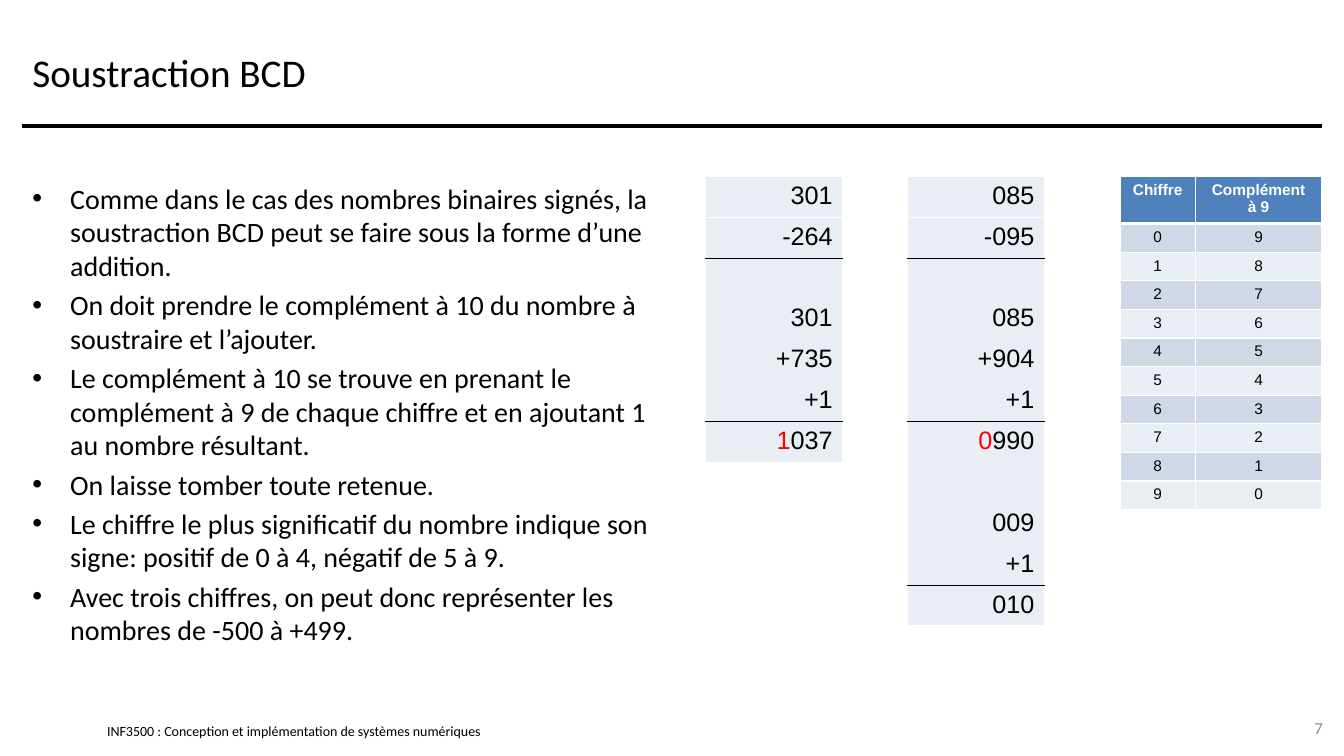
from lxml.etree import SubElement
from pptx import Presentation
from pptx.dml.color import RGBColor
from pptx.enum.text import MSO_ANCHOR as Anchor, PP_ALIGN as Align
from pptx.oxml.ns import qn
from pptx.util import Pt

BLACK, WHITE, RED, GRAY = "000000", "FFFFFF", "FF0000", "8C8C8C"
HEADER_BLUE, DARK_BAND, LIGHT_BAND = "4F81BD", "D0D8E8", "E9EDF4"

STEPS = [
    "Comme dans le cas des nombres binaires signés, la soustraction BCD peut se faire sous la forme d’une addition.",
    "On doit prendre le complément à 10 du nombre à soustraire et l’ajouter.",
    "Le complément à 10 se trouve en prenant le complément à 9 de chaque chiffre et en ajoutant 1 au nombre résultant.",
    "On laisse tomber toute retenue.",
    "Le chiffre le plus significatif du nombre indique son signe: positif de 0 à 4, négatif de 5 à 9.",
    "Avec trois chiffres, on peut donc représenter les nombres de -500 à +499.",
]
POSITIVE_CASE = ["301", "-264", "", "301", "+735", "+1", "1037"]
NEGATIVE_CASE = ["085", "-095", "", "085", "+904", "+1", "0990", "", "009", "+1", "010"]
RULED_ROWS = {1, 5, 9}
SIGNED_ROW = 6


def rgb(color):
    return RGBColor.from_string(color)


def add_run(paragraph, text, size, color=BLACK, font="Calibri", bold=False):
    run = paragraph.add_run()
    run.text = text
    run.font.size = Pt(size)
    run.font.name = font
    run.font.bold = bold
    run.font.color.rgb = rgb(color)


def add_frame(slide, left, top, width, height, anchor=Anchor.MIDDLE):
    frame = slide.shapes.add_textbox(Pt(left), Pt(top), Pt(width), Pt(height)).text_frame
    frame.word_wrap = True
    frame.vertical_anchor = anchor
    return frame


def add_heading(slide, left, top, width, height):
    title = add_frame(slide, left, top, width, height)
    add_run(title.paragraphs[0], "Soustraction BCD", 28)
    bottom = Pt(top + height)
    rule = slide.shapes.add_connector(1, Pt(left), bottom, Pt(left + width), bottom)
    rule.line.color.rgb = rgb(BLACK)
    rule.line.width = Pt(3)
    SubElement(rule._element.spPr, qn("a:effectLst"))


def add_steps(slide, left, top, width, height):
    frame = add_frame(slide, left, top, width, height, Anchor.TOP)
    for index, step in enumerate(STEPS):
        paragraph = frame.paragraphs[0] if index == 0 else frame.add_paragraph()
        properties = paragraph._p.get_or_add_pPr()
        properties.set("marL", str(Pt(27)))
        properties.set("indent", str(-Pt(27)))
        SubElement(properties, qn("a:buFont"), typeface="Arial")
        SubElement(properties, qn("a:buChar"), char="•")
        paragraph.space_before = Pt(4 if index else 0)
        add_run(paragraph, step, 20)


def add_grid(slide, left, top, widths, row_height, row_count):
    """Add an unbanded table and return it."""
    table = slide.shapes.add_table(row_count, len(widths), Pt(left), Pt(top),
                                   Pt(sum(widths)), Pt(row_height * row_count)).table
    table.first_row = table.horz_banding = False
    for column, width in zip(table.columns, widths):
        column.width = Pt(width)
    for row in table.rows:
        row.height = Pt(row_height)
    return table


def style_cell(cell, fill, top, bottom):
    """Fill a cell and draw its edges; top and bottom are (color, width) or None."""
    properties = cell._tc.get_or_add_tcPr()
    side = (WHITE, 1)
    for tag, edge in (("lnL", side), ("lnR", side), ("lnT", top), ("lnB", bottom)):
        line = SubElement(properties, qn("a:" + tag))
        if edge:
            color, width = edge
            line.set("w", str(Pt(width)))
            SubElement(SubElement(line, qn("a:solidFill")), qn("a:srgbClr"), val=color)
        else:
            SubElement(line, qn("a:noFill"))
    cell.fill.solid()
    cell.fill.fore_color.rgb = rgb(fill)


def add_calculation(slide, left, top, width, row_height, numbers):
    """Stack numbers in a column, with a black rule above each result."""
    table = add_grid(slide, left, top, [width], row_height, len(numbers))
    edge_above = (WHITE, 1)
    for row, number in enumerate(numbers):
        cell = table.cell(row, 0)
        if row in RULED_ROWS:
            edge_below = (BLACK, 1)
        else:
            edge_below = (WHITE, 1) if row in (0, len(numbers) - 1) else None
        style_cell(cell, LIGHT_BAND, edge_above, edge_below)
        edge_above = edge_below
        paragraph = cell.text_frame.paragraphs[0]
        paragraph.alignment = Align.RIGHT
        if row == SIGNED_ROW:
            add_run(paragraph, number[0], 18, RED, "Arial")
            number = number[1:]
        if number:
            add_run(paragraph, number, 18, font="Arial")


def add_complements(slide, left, top, widths, row_height):
    rows = [("Chiffre", "Complément à 9")]
    rows += [(str(digit), str(9 - digit)) for digit in range(10)]
    table = add_grid(slide, left, top, widths, row_height, len(rows))
    table.first_row = True
    for row, labels in enumerate(rows):
        is_header = row == 0
        fill = HEADER_BLUE if is_header else DARK_BAND if row % 2 else LIGHT_BAND
        for column, label in enumerate(labels):
            cell = table.cell(row, column)
            style_cell(cell, fill, (WHITE, 3 if row == 1 else 1), (WHITE, 3 if is_header else 1))
            paragraph = cell.text_frame.paragraphs[0]
            paragraph.alignment = Align.CENTER
            add_run(paragraph, label, 11, WHITE if is_header else BLACK, "Arial", is_header)


def add_footer(slide, top, height):
    course = add_frame(slide, 76.5, top + 10.5, 368, 12)
    course.margin_left = course.margin_right = course.margin_top = course.margin_bottom = 0
    add_run(course.paragraphs[0], "INF3500 : Conception et implémentation de systèmes numériques", 10)
    page = add_frame(slide, 904, top, 48, height).paragraphs[0]
    page.alignment = Align.RIGHT
    add_run(page, "7", 12, GRAY)


def main():
    deck = Presentation()
    deck.slide_width, deck.slide_height = Pt(960), Pt(540)
    slide = deck.slides.add_slide(deck.slide_layouts[6])
    add_heading(slide, 16, 12, 928, 78)
    add_steps(slide, 16, 126, 456, 366)
    add_calculation(slide, 504, 126, 98, 29.2, POSITIVE_CASE)
    add_calculation(slide, 648, 126, 98, 29.2, NEGATIVE_CASE)
    add_complements(slide, 800, 126, [54, 90], 18)
    add_footer(slide, 505.5, 29)
    deck.save("out.pptx")


if __name__ == "__main__":
    main()
